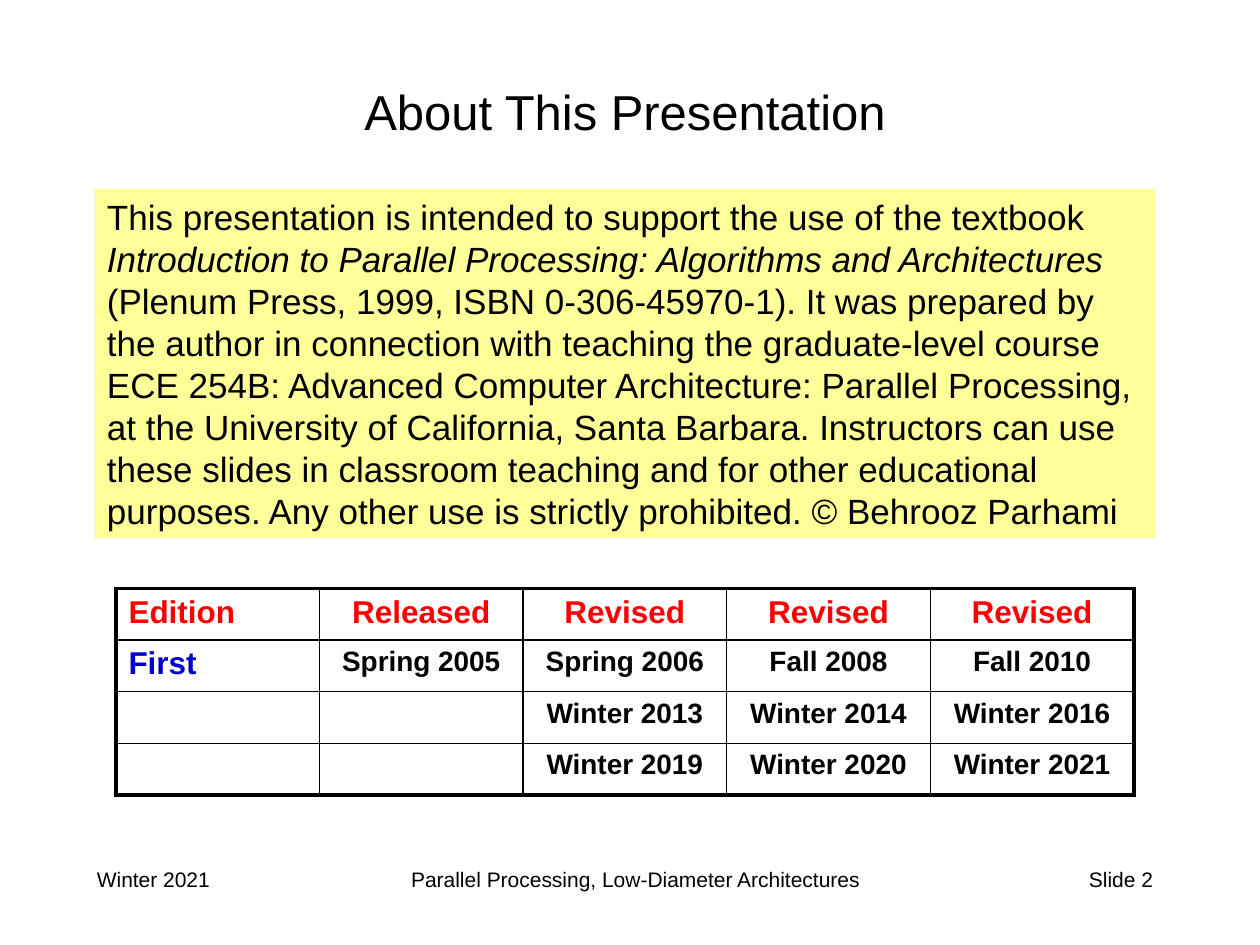
from dataclasses import dataclass

from lxml import etree
from pptx import Presentation
from pptx import util as u
from pptx.dml import color as c
from pptx.enum import shapes as s, text as t
from pptx.oxml import ns


@dataclass(frozen=True)
class Theme:
    face: str = "Arial"
    ink: str = "000000"
    panel: str = "FFFF99"
    head: str = "FF0000"
    first: str = "0000CC"
    title_pt: int = 28
    body_pt: int = 20
    head_pt: int = 18
    cell_pt: int = 16
    foot_pt: int = 12
    thin: float = 1
    thick: float = 2.25


LOOK = Theme()
LEFT, MID, RIGHT = t.PP_ALIGN.LEFT, t.PP_ALIGN.CENTER, t.PP_ALIGN.RIGHT

INTRO = [
    [("This presentation is intended to support the use of the textbook ", False),
     ("Introduction to Parallel Processing: Algorithms and Architectures ", True),
     ("(Plenum Press, 1999, ISBN 0-306-45970-1). It was prepared by the author "
      "in connection with teaching the graduate-level course", False)],
    [("ECE 254B: Advanced Computer Architecture: Parallel Processing, at the "
      "University of California, Santa Barbara. Instructors can use these slides "
      "in classroom teaching and for other educational purposes. Any other use is "
      "strictly prohibited. © Behrooz Parhami", False)],
]
EDITIONS = [
    ["Edition", "Released", "Revised", "Revised", "Revised"],
    ["First", "Spring 2005", "Spring 2006", "Fall 2008", "Fall 2010"],
    ["", "", "Winter 2013", "Winter 2014", "Winter 2016"],
    ["", "", "Winter 2019", "Winter 2020", "Winter 2021"],
]


def inch(box):
    return [u.Inches(n) for n in box]


def add_run(para, words, size, tint=LOOK.ink, bold=False, italic=False):
    run = para.add_run()
    run.text = words
    font = run.font
    font.name, font.size = LOOK.face, u.Pt(size)
    font.bold, font.italic = bold, italic
    font.color.rgb = c.RGBColor.from_string(tint)


def add_title(slide, box, words):
    title = slide.shapes.title
    title.left, title.top, title.width, title.height = inch(box)
    title.text_frame.vertical_anchor = t.MSO_ANCHOR.MIDDLE
    para = title.text_frame.paragraphs[0]
    para.alignment = MID
    add_run(para, words, LOOK.title_pt)


def add_panel(slide, box, paras):
    panel = slide.shapes.add_shape(s.MSO_SHAPE.RECTANGLE, *inch(box))
    panel.shadow.inherit = False
    panel.fill.solid()
    panel.fill.fore_color.rgb = c.RGBColor.from_string(LOOK.panel)
    panel.line.fill.background()
    frame = panel.text_frame
    frame.word_wrap = True
    frame.vertical_anchor = t.MSO_ANCHOR.TOP
    for i, runs in enumerate(paras):
        para = frame.add_paragraph() if i else frame.paragraphs[0]
        para.alignment = LEFT
        for words, italic in runs:
            add_run(para, words, LOOK.body_pt, italic=italic)


def add_edge(cell, side, width):
    line = etree.SubElement(cell._tc.get_or_add_tcPr(), ns.qn(f"a:ln{side}"),
                            w=str(u.Pt(width)))
    fill = etree.SubElement(line, ns.qn("a:solidFill"))
    etree.SubElement(fill, ns.qn("a:srgbClr"), val=LOOK.ink)


def add_grid(slide, box, rows):
    high, wide = len(rows), len(rows[0])
    grid = slide.shapes.add_table(high, wide, *inch(box)).table
    grid.first_row = grid.horz_banding = False
    for y, row in enumerate(rows):
        for x, words in enumerate(row):
            cell = grid.cell(y, x)
            # Heavy outer frame, thin inner rules
            outer = {"L": x == 0, "R": x == wide - 1, "T": y == 0, "B": y == high - 1}
            for side, edge in outer.items():
                add_edge(cell, side, LOOK.thick if edge else LOOK.thin)
            cell.fill.background()
            if not words:
                continue
            para = cell.text_frame.paragraphs[0]
            para.alignment = MID if x else LEFT
            size = LOOK.cell_pt if x and y else LOOK.head_pt
            tint = LOOK.head if y == 0 else LOOK.ink if x else LOOK.first
            add_run(para, words, size, tint, bold=True)


def add_label(slide, box, words, align):
    label = slide.shapes.add_textbox(*inch(box))
    label.text_frame.word_wrap = True
    para = label.text_frame.paragraphs[0]
    para.alignment = align
    add_run(para, words, LOOK.foot_pt)


def add_foot(slide, box):
    left, top, width, height = box
    side, main = 2.08, 5.25
    # Date, topic and slide number
    add_label(slide, (left, top, side, height), "Winter 2021", LEFT)
    add_label(slide, (left + 1.75, top, main, height),
              "Parallel Processing, Low-Diameter Architectures", MID)
    add_label(slide, (left + width - side, top, side, height), "Slide 2", RIGHT)


def main():
    deck = Presentation()
    deck.slide_width, deck.slide_height = u.Inches(10), u.Inches(7.5)
    slide = deck.slides.add_slide(deck.slide_layouts[5])
    add_foot(slide, (0.67, 6.83, 8.58, 0.5))
    add_title(slide, (0.42, 0.42, 9.08, 0.92), "About This Presentation")
    add_panel(slide, (0.75, 1.5, 8.42, 2.77), INTRO)
    add_grid(slide, (0.92, 4.67, 8.08, 1.64), EDITIONS)
    deck.save("out.pptx")


if __name__ == "__main__":
    main()
